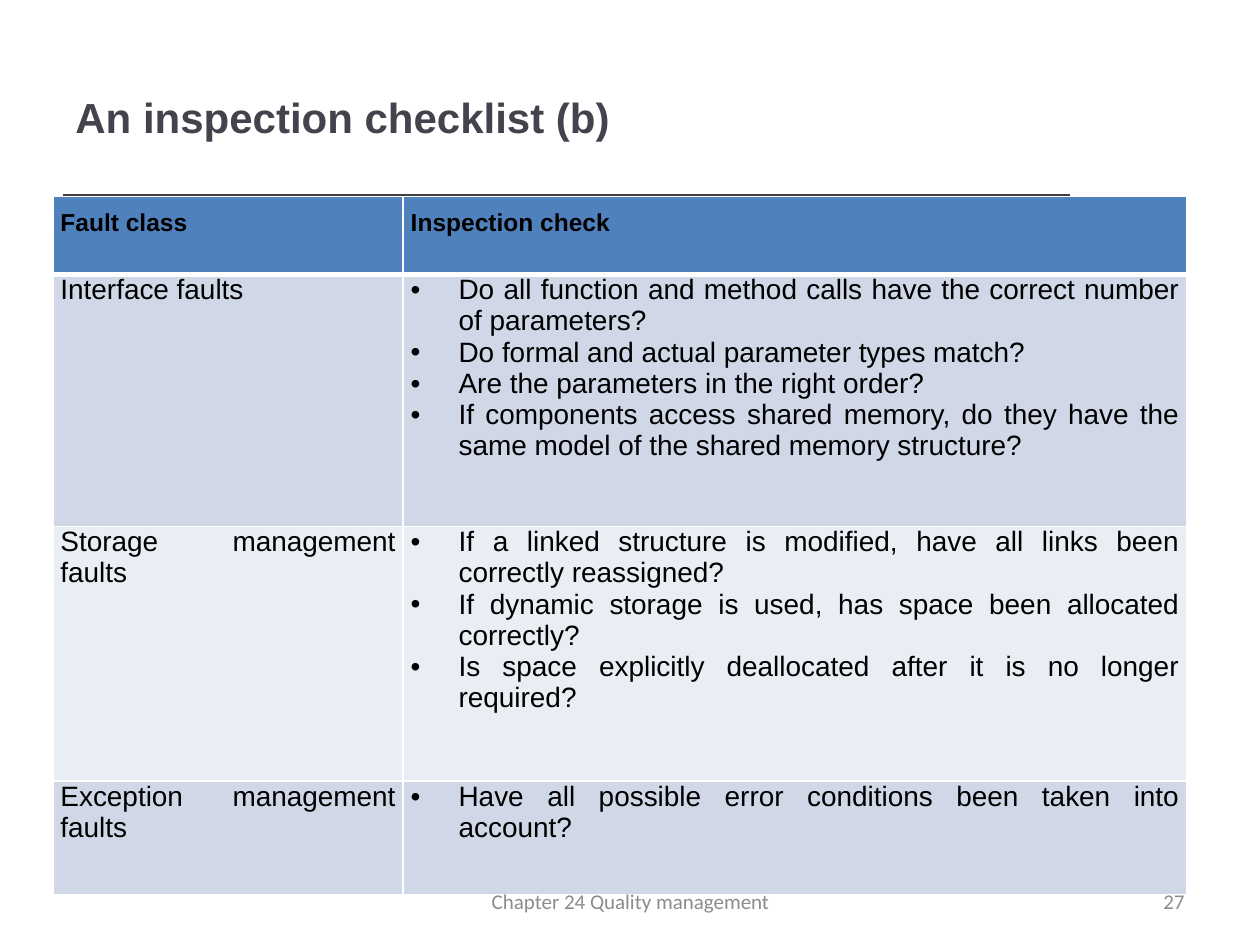
from lxml import etree
from pptx import Presentation
from pptx.dml.color import RGBColor
from pptx.enum.shapes import MSO_CONNECTOR
from pptx.enum.text import MSO_ANCHOR, PP_ALIGN
from pptx.oxml.ns import qn
from pptx.util import Inches, Pt

STRAIGHT = MSO_CONNECTOR.STRAIGHT
MIDDLE = MSO_ANCHOR.MIDDLE
LEFT, CENTER, RIGHT, JUSTIFY = (
    PP_ALIGN.LEFT, PP_ALIGN.CENTER, PP_ALIGN.RIGHT, PP_ALIGN.JUSTIFY)

TITLE_COLOR = RGBColor(0x46, 0x42, 0x4D)
RULE_COLOR = RGBColor(0x40, 0x40, 0x40)
FOOTER_COLOR = RGBColor(0x8C, 0x8C, 0x8C)
BLACK = RGBColor(0, 0, 0)
HEADER_FILL = RGBColor(0x4F, 0x81, 0xBD)
BAND_FILLS = (RGBColor(0xD0, 0xD8, 0xE8), RGBColor(0xE9, 0xED, 0xF4))
BORDER_COLOR = "FFFFFF"

HEADERS = ("Fault class", "Inspection check")
CHECKLIST = (
    ("Interface faults", (
        "Do all function and method calls have the correct number of parameters?",
        "Do formal and actual parameter types match?",
        "Are the parameters in the right order?",
        "If components access shared memory, do they have the same model "
        "of the shared memory structure?")),
    ("Storage management faults", (
        "If a linked structure is modified, have all links been correctly reassigned?",
        "If dynamic storage is used, has space been allocated correctly?",
        "Is space explicitly deallocated after it is no longer required?")),
    ("Exception management faults", (
        "Have all possible error conditions been taken into account?",)),
)
COL_WIDTHS = (2.78, 6.22)
ROW_HEIGHTS = (0.62, 2, 2.02, 0.9)


def style_font(font, name, size, color, bold=False):
    font.name = name
    font.size = Pt(size)
    font.bold = bold
    font.color.rgb = color


def add_text(slide, box, text, align, name, size, color, bold=False):
    sp = slide.shapes.add_textbox(*map(Inches, box))
    tf = sp.text_frame
    tf.word_wrap = True
    tf.vertical_anchor = MIDDLE
    p = tf.paragraphs[0]
    p.text = text
    p.alignment = align
    style_font(p.runs[0].font, name, size, color, bold)


def add_rule(slide, x1, x2, y):
    line = slide.shapes.add_connector(
        STRAIGHT, Inches(x1), Inches(y), Inches(x2), Inches(y))
    line.line.color.rgb = RULE_COLOR
    line.line.width = Pt(2)
    etree.SubElement(line._element.spPr, qn("a:effectLst"))


def add_bullet(p):
    pPr = p._p.get_or_add_pPr()
    indent = Inches(0.38)
    pPr.set("marL", str(indent))
    pPr.set("indent", str(-indent))
    etree.SubElement(pPr, qn("a:buFont"), typeface="Arial")
    etree.SubElement(pPr, qn("a:buChar"), char="•")
    tabs = etree.SubElement(pPr, qn("a:tabLst"))
    etree.SubElement(tabs, qn("a:tab"), pos=str(Inches(0.25)), algn="l")


def set_borders(cell, bottom, top):
    tcPr = cell._tc.get_or_add_tcPr()
    for side, width in (("L", 1), ("R", 1), ("T", top), ("B", bottom)):
        ln = etree.SubElement(tcPr, qn(f"a:ln{side}"), w=str(Pt(width)))
        fill = etree.SubElement(ln, qn("a:solidFill"))
        etree.SubElement(fill, qn("a:srgbClr"), val=BORDER_COLOR)


def fill_cell(cell, lines, fill, size, header=False, bullets=False):
    set_borders(cell, bottom=3 if header else 1, top=1)
    cell.fill.solid()
    cell.fill.fore_color.rgb = fill
    cell.margin_left = cell.margin_right = Inches(0.06)
    cell.margin_top = Inches(0.1 if header else 0)
    cell.margin_bottom = Inches(0.1)
    tf = cell.text_frame
    for i, line in enumerate(lines):
        p = tf.add_paragraph() if i else tf.paragraphs[0]
        p.text = line
        p.alignment = JUSTIFY
        if bullets:
            add_bullet(p)
        style_font(p.runs[0].font, "Arial", size, BLACK, header)


def add_checklist(slide, left, top):
    table = slide.shapes.add_table(
        len(ROW_HEIGHTS), len(COL_WIDTHS), Inches(left), Inches(top),
        Inches(sum(COL_WIDTHS)), Inches(sum(ROW_HEIGHTS))).table
    for col, width in zip(table.columns, COL_WIDTHS):
        col.width = Inches(width)
    for row, height in zip(table.rows, ROW_HEIGHTS):
        row.height = Inches(height)
    for c, header in enumerate(HEADERS):
        fill_cell(table.cell(0, c), [header], HEADER_FILL, 14, header=True)
    for r, (fault, checks) in enumerate(CHECKLIST, start=1):
        fill = BAND_FILLS[(r - 1) % 2]
        fill_cell(table.cell(r, 0), [fault], fill, 16)
        fill_cell(table.cell(r, 1), checks, fill, 16, bullets=True)


def main():
    prs = Presentation()
    prs.slide_width, prs.slide_height = Inches(10), Inches(7.5)
    slide = prs.slides.add_slide(prs.slide_layouts[6])

    # Title and rule
    add_rule(slide, 0.5, 8.49, 1.55)
    add_text(slide, (0.5, 0.3, 7.98, 1.25), "An inspection checklist (b)",
             LEFT, "Arial", 24, TITLE_COLOR, bold=True)

    # Checklist table
    add_checklist(slide, 0.42, 1.56)

    # Footer
    add_text(slide, (7.17, 6.95, 2.33, 0.4), "27",
             RIGHT, "Calibri", 12, FOOTER_COLOR)
    add_text(slide, (3.42, 6.95, 3.17, 0.4), "Chapter 24 Quality management",
             CENTER, "Calibri", 12, FOOTER_COLOR)

    prs.save("out.pptx")


if __name__ == "__main__":
    main()
